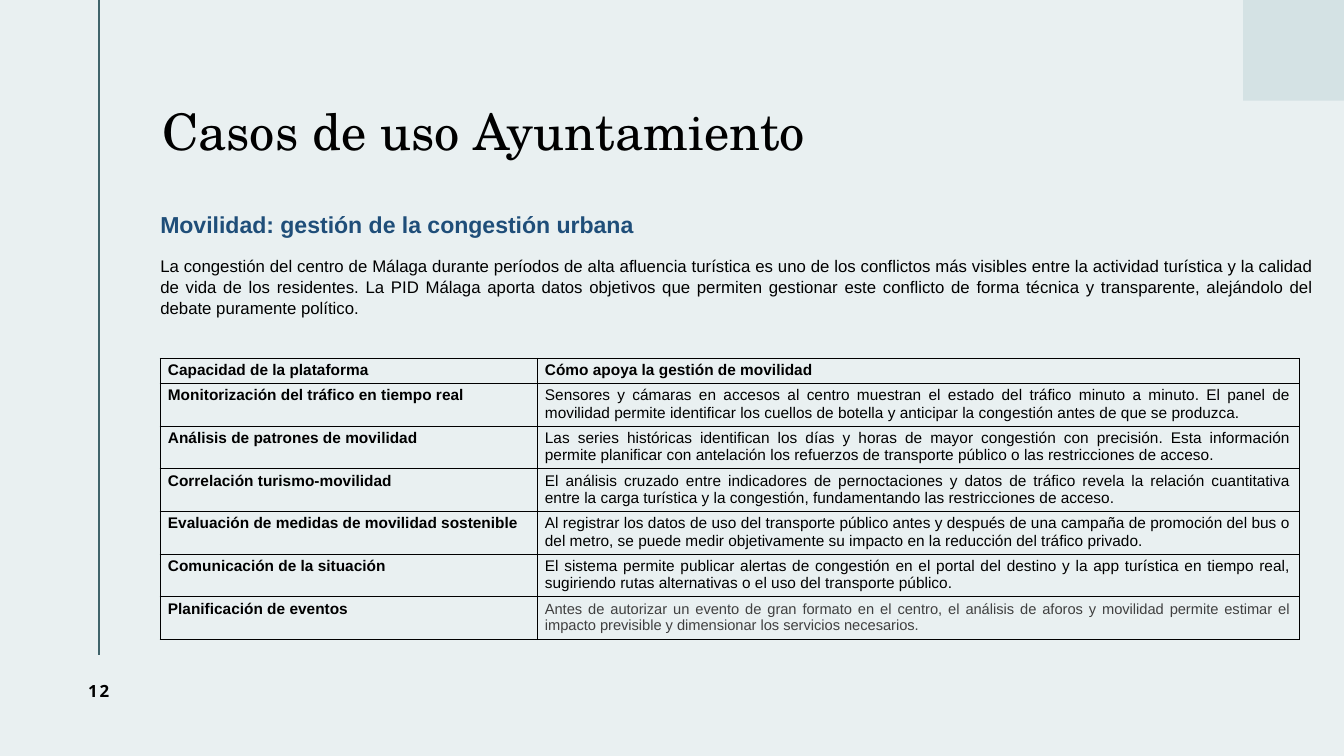
from dataclasses import dataclass

from lxml.etree import SubElement
from pptx import Presentation
from pptx.dml.color import RGBColor
from pptx.enum.shapes import MSO_CONNECTOR as Connector, MSO_SHAPE as Shape
from pptx.enum.text import MSO_ANCHOR as Anchor, MSO_AUTO_SIZE as AutoSize, PP_ALIGN as Align
from pptx.oxml.ns import qn
from pptx.util import Pt


@dataclass(frozen=True)
class Theme:
    background: str = "E9F0F1"
    corner: str = "D4E2E4"
    rule: str = "3F636A"
    heading: str = "1F4E79"
    ink: str = "000000"
    muted: str = "404040"
    title_font: str = "TeX Gyre Schola"
    body_font: str = "Arial"
    number_font: str = "Open Sans"
    title_size: float = 36
    heading_size: float = 16.5
    text_size: float = 12
    cell_size: float = 11
    small_size: float = 10.5


@dataclass(frozen=True)
class Capability:
    name: str
    support: str
    size: float = Theme.cell_size
    color: str = Theme.ink
    margin: float = 2.5


THEME = Theme()
HEADER = ("Capacidad de la plataforma", "Cómo apoya la gestión de movilidad")
CAPABILITIES = [
    Capability("Monitorización del tráfico en tiempo real",
               "Sensores y cámaras en accesos al centro muestran el estado del tráfico minuto a minuto. "
               "El panel de movilidad permite identificar los cuellos de botella y anticipar la congestión "
               "antes de que se produzca."),
    Capability("Análisis de patrones de movilidad",
               "Las series históricas identifican los días y horas de mayor congestión con precisión. "
               "Esta información permite planificar con antelación los refuerzos de transporte público "
               "o las restricciones de acceso."),
    Capability("Correlación turismo-movilidad",
               "El análisis cruzado entre indicadores de pernoctaciones y datos de tráfico revela la relación "
               "cuantitativa entre la carga turística y la congestión, fundamentando las restricciones de acceso."),
    Capability("Evaluación de medidas de movilidad sostenible",
               "Al registrar los datos de uso del transporte público antes y después de una campaña de promoción "
               "del bus o del metro, se puede medir objetivamente su impacto en la reducción del tráfico privado."),
    Capability("Comunicación de la situación",
               "El sistema permite publicar alertas de congestión en el portal del destino y la app turística "
               "en tiempo real, sugiriendo rutas alternativas o el uso del transporte público."),
    Capability("Planificación de eventos",
               "Antes de autorizar un evento de gran formato en el centro, el análisis de aforos y movilidad "
               "permite estimar el impacto previsible y dimensionar los servicios necesarios.",
               THEME.small_size, THEME.muted, 3.3),
]


def rgb(color: str) -> RGBColor:
    return RGBColor.from_string(color)


def write(paragraph, text: str, *, size: float, font: str = THEME.body_font, color: str = THEME.ink,
          bold: bool = False, align=Align.LEFT, line_spacing: float = 1.0,
          before: float = 0, tracking: float = 0) -> None:
    properties = paragraph._p.get_or_add_pPr()
    properties.set("marL", "0")
    properties.set("indent", "0")
    SubElement(properties, qn("a:buNone"))
    paragraph.alignment = align
    paragraph.line_spacing = line_spacing
    paragraph.space_before = Pt(before)
    paragraph.space_after = Pt(0)
    run = paragraph.add_run()
    run.text = text
    run.font.size, run.font.name, run.font.bold = Pt(size), font, bold
    run.font.color.rgb = rgb(color)
    if tracking:
        run._r.get_or_add_rPr().set("spc", str(round(tracking * 100)))


def place(shape, left: float, top: float, width: float, height: float) -> None:
    shape.left, shape.top, shape.width, shape.height = Pt(left), Pt(top), Pt(width), Pt(height)


def set_frame(frame, margins: tuple[float, float, float, float], anchor) -> None:
    frame.margin_left, frame.margin_top, frame.margin_right, frame.margin_bottom = map(Pt, margins)
    frame.vertical_anchor = anchor
    frame.word_wrap = True
    frame.auto_size = AutoSize.NONE


def fill_cell(cell, text: str, margin: float = 2.5, **text_format) -> None:
    cell.margin_left = cell.margin_right = Pt(5.75)
    cell.margin_top = cell.margin_bottom = Pt(margin)
    write(cell.text_frame.paragraphs[0], text, **text_format)
    # Borders come before the fill in the cell properties
    properties = cell._tc.get_or_add_tcPr()
    for side in ("lnL", "lnR", "lnT", "lnB"):
        border = SubElement(properties, qn(f"a:{side}"), w=str(Pt(0.5)))
        SubElement(SubElement(border, qn("a:solidFill")), qn("a:srgbClr"), val=THEME.ink)
    cell.fill.background()


def add_decoration(slide) -> None:
    margin_rule = slide.shapes.add_connector(Connector.STRAIGHT, Pt(70.6), Pt(0), Pt(70.6), Pt(468))
    margin_rule.line.color.rgb = rgb(THEME.rule)
    margin_rule.line.width = Pt(1.5)
    SubElement(margin_rule._element.spPr, qn("a:effectLst"))
    corner = slide.shapes.add_shape(Shape.RECTANGLE, Pt(888), Pt(0), Pt(72), Pt(72))
    corner.shadow.inherit = False
    corner.fill.solid()
    corner.fill.fore_color.rgb = rgb(THEME.corner)
    corner.line.fill.background()


def add_headings(slide) -> None:
    title = slide.shapes.title
    place(title, 115.9, 39.6, 720.7, 112.3)
    set_frame(title.text_frame, (0, 3.6, 7.2, 3.6), Anchor.MIDDLE)
    write(title.text_frame.paragraphs[0], "Casos de uso Ayuntamiento", size=THEME.title_size,
          font=THEME.title_font, line_spacing=0.9)

    introduction = slide.placeholders[1]
    place(introduction, 114.5, 149, 824.4, 324.7)
    frame = introduction.text_frame
    set_frame(frame, (0, 0, 0, 0), Anchor.TOP)
    write(frame.paragraphs[0], "Movilidad: gestión de la congestión urbana", size=THEME.heading_size,
          color=THEME.heading, bold=True, line_spacing=1.05)
    write(frame.add_paragraph(),
          "La congestión del centro de Málaga durante períodos de alta afluencia turística es uno de los "
          "conflictos más visibles entre la actividad turística y la calidad de vida de los residentes. "
          "La PID Málaga aporta datos objetivos que permiten gestionar este conflicto de forma técnica y "
          "transparente, alejándolo del debate puramente político.",
          size=THEME.text_size, align=Align.JUSTIFY, line_spacing=1.05, before=12)


def add_capabilities(slide) -> None:
    heights = [18] + [30.5] * len(CAPABILITIES)
    table = slide.shapes.add_table(len(heights), 2, Pt(114.2), Pt(255.9), Pt(813.6), Pt(sum(heights))).table
    table.first_row = table.horz_banding = False
    for column, width in zip(table.columns, (269.3, 544.3)):
        column.width = Pt(width)
    for row, height in zip(table.rows, heights):
        row.height = Pt(height)
    for column, label in enumerate(HEADER):
        fill_cell(table.cell(0, column), label, size=THEME.cell_size, bold=True)
    for row, capability in enumerate(CAPABILITIES, start=1):
        fill_cell(table.cell(row, 0), capability.name, size=THEME.cell_size, bold=True)
        fill_cell(table.cell(row, 1), capability.support, capability.margin, size=capability.size,
                  color=capability.color, align=Align.JUSTIFY)


def add_page_number(slide) -> None:
    page_number = slide.shapes.add_textbox(Pt(32.4), Pt(468), Pt(76.3), Pt(51.1))
    set_frame(page_number.text_frame, (7.2, 3.6, 7.2, 3.6), Anchor.MIDDLE)
    write(page_number.text_frame.paragraphs[0], "12", size=THEME.text_size, font=THEME.number_font,
          bold=True, align=Align.CENTER, tracking=1.5)


def main() -> None:
    deck = Presentation()
    deck.slide_width, deck.slide_height = Pt(960), Pt(540)
    slide = deck.slides.add_slide(deck.slide_layouts[1])
    slide.background.fill.solid()
    slide.background.fill.fore_color.rgb = rgb(THEME.background)
    add_decoration(slide)
    add_headings(slide)
    add_capabilities(slide)
    add_page_number(slide)
    deck.save("out.pptx")


if __name__ == "__main__":
    main()
